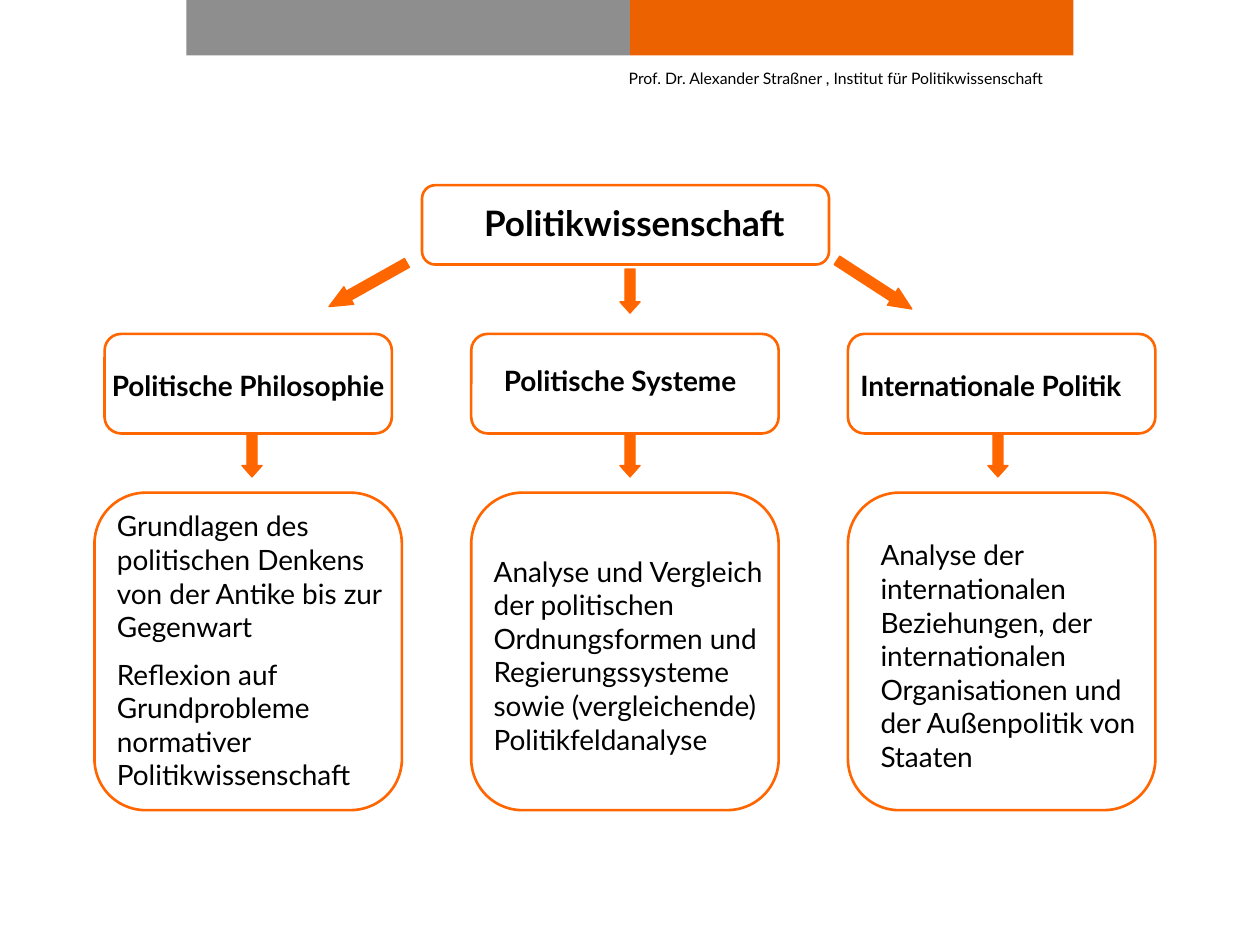
import pptx
import pptx.util
import pptx.dml.color
import pptx.enum.shapes
import pptx.enum.text

Inches, Pt = pptx.util.Inches, pptx.util.Pt
SHAPE = pptx.enum.shapes.MSO_SHAPE
ALIGN = pptx.enum.text.PP_ALIGN

COLORS = {"grey": "8E8E8E", "header": "EC6200", "accent": "FF6600", "text": "000000"}
FONT = "Lato"
AUTHOR = "Prof. Dr. Alexander Straßner , Institut für Politikwissenschaft"
TITLE = "Politikwissenschaft"

# Text positions are (left, top); heading boxes are (left, width).
FIELDS = [
    {
        "heading": "Politische Philosophie", "heading_box": (0.83, 2.28),
        "heading_at": (0.75, 2.88), "align": ALIGN.CENTER, "arrow_x": 2.0,
        "body_at": (0.83, 3.99),
        "body": ["Grundlagen des politischen Denkens von der Antike bis zur Gegenwart",
                 "Reflexion auf Grundprobleme normativer Politikwissenschaft"],
    },
    {
        "heading": "Politische Systeme", "heading_box": (3.74, 2.44),
        "heading_at": (3.9, 2.84), "align": ALIGN.LEFT, "arrow_x": 5.0,
        "body_at": (3.82, 4.35),
        "body": ["Analyse und Vergleich der politischen Ordnungsformen und "
                 "Regierungssysteme sowie (vergleichende) Politikfeldanalyse"],
    },
    {
        "heading": "Internationale Politik", "heading_box": (6.73, 2.44),
        "heading_at": (6.73, 2.88), "align": ALIGN.LEFT, "arrow_x": 7.92,
        "body_at": (6.89, 4.22),
        "body": ["Analyse der internationalen Beziehungen, der internationalen "
                 "Organisationen und der Außenpolitik von Staaten"],
    },
]
COLUMN_LEFT, COLUMN_STEP, COLUMN_WIDTH = 0.75, 2.99, 2.44

# Center x, center y, length, rotation, head ratio
TITLE_ARROWS = [
    (2.92, 2.26, 0.71, 150.7, 1.13),
    (6.94, 2.26, 0.71, 33, 1.13),
    (5.0, 2.31, 0.35, 90, 0.56),
]
FIELD_ARROWS = [(field["arrow_x"], 3.61, 0.35, 90, 0.56) for field in FIELDS]
ARROW_THICKNESS = 0.16


def rgb(name):
    return pptx.dml.color.RGBColor.from_string(COLORS[name])


def add_box(slide, kind, box, fill=None, line=None, line_width=1.5):
    shape = slide.shapes.add_shape(kind, *map(Inches, box))
    shape.shadow.inherit = False
    if fill:
        shape.fill.solid()
        shape.fill.fore_color.rgb = rgb(fill)
    else:
        shape.fill.background()
    if line:
        shape.line.color.rgb = rgb(line)
        shape.line.width = Pt(line_width)
    else:
        shape.line.fill.background()
    return shape


def add_arrow(slide, center_x, center_y, length, rotation, head):
    box = (center_x - length / 2, center_y - ARROW_THICKNESS / 2, length, ARROW_THICKNESS)
    arrow = add_box(slide, SHAPE.RIGHT_ARROW, box, "accent", "accent", 0.75)
    arrow.adjustments[1] = head
    arrow.rotation = rotation


def add_text(slide, box, paragraphs, size=16, bold=False, align=ALIGN.LEFT):
    text_frame = slide.shapes.add_textbox(*map(Inches, box)).text_frame
    text_frame.word_wrap = True
    text_frame.text = "\n".join(paragraphs)
    for index, paragraph in enumerate(text_frame.paragraphs):
        paragraph.alignment = align
        if index:
            paragraph.space_before = Pt(size / 2)
        for run in paragraph.runs:
            run.font.name = FONT
            run.font.size = Pt(size)
            run.font.bold = bold
            run.font.color.rgb = rgb("text")
    return text_frame


def main():
    presentation = pptx.Presentation()
    presentation.slide_width, presentation.slide_height = Inches(10), Inches(7.5)
    slide = presentation.slides.add_slide(presentation.slide_layouts[6])

    for left, color in ((1.48, "grey"), (5, "header")):
        add_box(slide, SHAPE.RECTANGLE, (left, 0, 3.52, 0.44), fill=color)
    author = add_text(slide, (4.99, 0.56, 3.53, 0.53), [AUTHOR], size=9)
    author.margin_left = author.margin_right = author.margin_top = author.margin_bottom = 0
    author.paragraphs[0].line_spacing = Pt(10)

    add_box(slide, SHAPE.ROUNDED_RECTANGLE, (3.35, 1.47, 3.23, 0.63), line="accent")
    add_text(slide, (3.58, 1.55, 2.91, 0.43), [TITLE], 20, True, ALIGN.CENTER)

    for index, field in enumerate(FIELDS):
        column = COLUMN_LEFT + index * COLUMN_STEP
        left, width = field["heading_box"]
        add_box(slide, SHAPE.ROUNDED_RECTANGLE, (left, 2.65, width, 0.79), line="accent")
        add_text(slide, (*field["heading_at"], COLUMN_WIDTH, 0.37), [field["heading"]],
                 bold=True, align=field["align"])
        add_box(slide, SHAPE.ROUNDED_RECTANGLE, (column, 3.91, COLUMN_WIDTH, 2.52), line="accent")
        add_text(slide, (*field["body_at"], COLUMN_WIDTH, 2.1), field["body"])

    for arrow in TITLE_ARROWS + FIELD_ARROWS:
        add_arrow(slide, *arrow)

    presentation.save("out.pptx")


if __name__ == "__main__":
    main()
